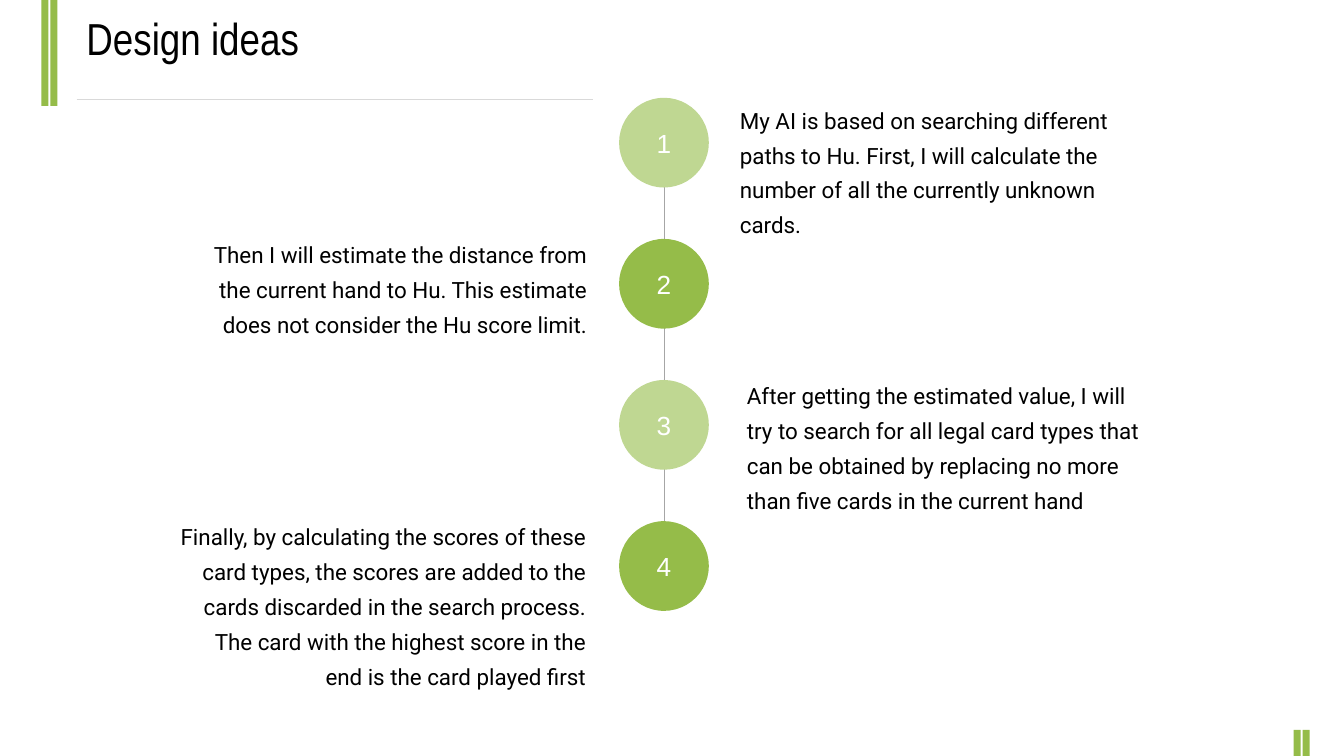
from pptx import Presentation
from pptx.dml.color import RGBColor
from pptx.enum.shapes import MSO_CONNECTOR, MSO_SHAPE
from pptx.enum.text import MSO_ANCHOR, PP_ALIGN as Align
from pptx.util import Inches, Pt
from lxml import etree

GREEN = RGBColor(0x95, 0xBC, 0x49)
LIGHT = RGBColor(0xBF, 0xD7, 0x92)
PALE = RGBColor(0xD9, 0xD9, 0xD9)
GRAY = RGBColor(0xA6, 0xA6, 0xA6)
WHITE = RGBColor(0xFF, 0xFF, 0xFF)
BLACK = RGBColor(0, 0, 0)
NS = "http://schemas.openxmlformats.org/drawingml/2006/main"

deck = Presentation()
deck.slide_width = Inches(13.33)
deck.slide_height = Inches(7.5)
slide = deck.slides.add_slide(deck.slide_layouts[6])
shapes = slide.shapes


def add_solid(kind, left, top, width, height, color):
    shape = shapes.add_shape(kind, Inches(left), Inches(top), Inches(width), Inches(height))
    shape.shadow.inherit = False
    shape.fill.solid()
    shape.fill.fore_color.rgb = color
    shape.line.fill.background()
    return shape


def add_text(left, top, width, height, text, size, font, align):
    box = shapes.add_textbox(Inches(left), Inches(top), Inches(width), Inches(height))
    box.text_frame.word_wrap = True
    para = box.text_frame.paragraphs[0]
    para.text = text
    para.alignment = align
    para.font.size = Pt(size)
    para.font.name = font
    para.font.color.rgb = BLACK
    return para


for left, top, height in [(0.41, 0, 1.05), (0.5, 0, 1.05), (12.83, 7.24, 0.26), (12.92, 7.24, 0.26)]:
    add_solid(MSO_SHAPE.RECTANGLE, left, top, 0.07, height, GREEN)

for x1, y1, x2, y2, color in [(0.76, 0.99, 5.88, 0.99, PALE), (6.59, 1.49, 6.59, 5.69, GRAY)]:
    line = shapes.add_connector(MSO_CONNECTOR.STRAIGHT, Inches(x1), Inches(y1), Inches(x2), Inches(y2))
    line.line.color.rgb = color
    line.line.width = Pt(0.75)
    etree.SubElement(line._element.spPr, f"{{{NS}}}effectLst")

add_text(0.76, 0.06, 8.67, 0.64, "Design ideas", 32, "Arial Narrow", Align.LEFT)

steps = [
    (7.24, 0.93, 1.46, "My AI is based on searching different paths to Hu. First, I will "
     "calculate the number of all the currently unknown cards."),
    (1.67, 2.26, 1.12, "Then I will estimate the distance from the current hand to Hu. "
     "This estimate does not consider the Hu score limit."),
    (7.31, 3.66, 1.46, "After getting the estimated value, I will try to search for all legal "
     "card types that can be obtained by replacing no more than five cards in the current hand"),
    (1.66, 5.06, 1.81, "Finally, by calculating the scores of these card types, the scores are "
     "added to the cards discarded in the search process. The card with the highest score in "
     "the end is the card played first"),
]
for i, (left, top, height, text) in enumerate(steps):
    odd = i % 2
    disc = add_solid(MSO_SHAPE.OVAL, 6.14, 0.97 + 1.4 * i, 0.89, 0.89, GREEN if odd else LIGHT)
    frame = disc.text_frame
    frame.word_wrap = False
    frame.vertical_anchor = MSO_ANCHOR.MIDDLE
    label = frame.paragraphs[0]
    label.text = str(i + 1)
    label.alignment = Align.CENTER
    label.font.size = Pt(18.7)
    label.font.name = "Arial"
    label.font.color.rgb = WHITE

    para = add_text(left, top, 4.25, height, text, 16, "Roboto", Align.RIGHT if odd else Align.LEFT)
    para.line_spacing = 1.3
    para.space_before = Pt(8)

deck.save("out.pptx")
